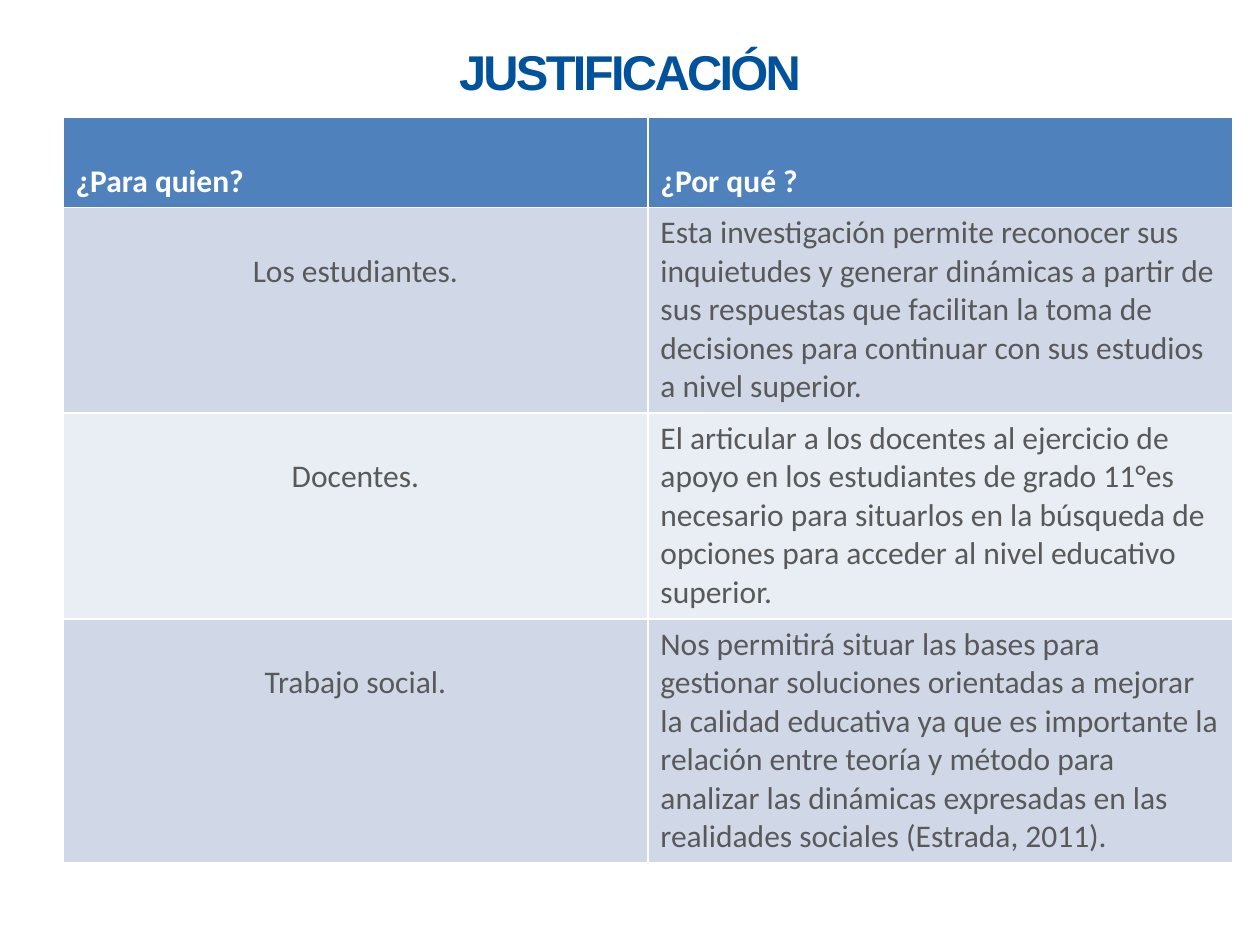
import dataclasses

import pptx
import pptx.dml.color
import pptx.enum.text
import pptx.util

Cm = pptx.util.Cm
Pt = pptx.util.Pt
Align = pptx.enum.text.PP_ALIGN
Anchor = pptx.enum.text.MSO_ANCHOR

TITLE_ONLY_LAYOUT = 5


@dataclasses.dataclass(frozen=True)
class Theme:
    title_font: str = "Arial"
    body_font: str = "Calibri"
    title_size: float = 27.9
    body_size: float = 18
    title_spacing: int = -150  # hundredths of a point
    title_color: str = "00529C"
    header_text: str = "FFFFFF"
    body_text: str = "595959"
    header_fill: str = "4F81BD"
    band_fills: tuple = ("D0D8E8", "E9EDF4")


HEADERS = ("¿Para quien?", "¿Por qué ?")
REASONS = (
    ("Los estudiantes.",
     "Esta investigación permite reconocer sus inquietudes y generar dinámicas "
     "a partir de sus respuestas que facilitan la toma de decisiones para "
     "continuar con sus estudios a nivel superior."),
    ("Docentes.",
     "El articular a los docentes al ejercicio de apoyo en los estudiantes de "
     "grado 11°es necesario para situarlos en la búsqueda de opciones para "
     "acceder al nivel educativo superior."),
    ("Trabajo social.",
     "Nos permitirá situar las bases para gestionar soluciones orientadas a "
     "mejorar la calidad educativa ya que es importante la relación entre "
     "teoría y método para analizar las dinámicas expresadas en las realidades "
     "sociales (Estrada, 2011)."),
)
ROW_HEIGHTS = (1.82, 4.15, 4.15, 4.92)
COLUMN_WIDTH = 11.79
AUDIENCE_TOP_MARGIN = 0.9  # sets the audience one line below the cell top


class SlideBuilder:
    def __init__(self, deck, theme):
        self.theme = theme
        self.slide = deck.slides.add_slide(deck.slide_layouts[TITLE_ONLY_LAYOUT])

    def format_font(self, font, name, size, color, bold=False):
        font.name = name
        font.size = Pt(size)
        font.bold = bold
        font.color.rgb = pptx.dml.color.RGBColor.from_string(color)

    def title(self, text, left, top, width, height):
        theme = self.theme
        box = self.slide.shapes.title
        box.left, box.top, box.width, box.height = map(Cm, (left, top, width, height))
        box.text_frame.vertical_anchor = Anchor.MIDDLE
        para = box.text_frame.paragraphs[0]
        para.alignment = Align.CENTER
        self.format_font(para.font, theme.title_font, theme.title_size,
                         theme.title_color, bold=True)
        span = para.add_run()
        span.text = text
        span._r.get_or_add_rPr().set("spc", str(theme.title_spacing))

    def cell(self, cell, text, fill, color, bold=False, align=Align.LEFT):
        cell.fill.solid()
        cell.fill.fore_color.rgb = pptx.dml.color.RGBColor.from_string(fill)
        cell.text = text
        para = cell.text_frame.paragraphs[0]
        para.alignment = align
        self.format_font(para.font, self.theme.body_font, self.theme.body_size,
                         color, bold)

    def table(self, headers, rows, left, top, column_width, row_heights):
        theme = self.theme
        table = self.slide.shapes.add_table(
            len(row_heights), len(headers), Cm(left), Cm(top),
            Cm(column_width * len(headers)), Cm(sum(row_heights))).table
        for column in table.columns:
            column.width = Cm(column_width)
        for row, height in zip(table.rows, row_heights):
            row.height = Cm(height)

        for index, header in enumerate(headers):
            header_cell = table.cell(0, index)
            self.cell(header_cell, header, theme.header_fill, theme.header_text, bold=True)
            header_cell.vertical_anchor = Anchor.BOTTOM

        for index, (audience, reason) in enumerate(rows):
            fill = theme.band_fills[index % len(theme.band_fills)]
            audience_cell = table.cell(index + 1, 0)
            self.cell(audience_cell, audience, fill, theme.body_text, align=Align.CENTER)
            audience_cell.margin_top = Cm(AUDIENCE_TOP_MARGIN)
            self.cell(table.cell(index + 1, 1), reason, fill, theme.body_text)


def main():
    deck = pptx.Presentation()
    deck.slide_width, deck.slide_height = Cm(25.4), Cm(19.05)
    builder = SlideBuilder(deck, Theme())
    builder.title("JUSTIFICACIÓN", 1.27, 0.76, 22.86, 1.35)
    builder.table(HEADERS, REASONS, 1.27, 2.36, COLUMN_WIDTH, ROW_HEIGHTS)
    deck.save("out.pptx")


if __name__ == "__main__":
    main()
